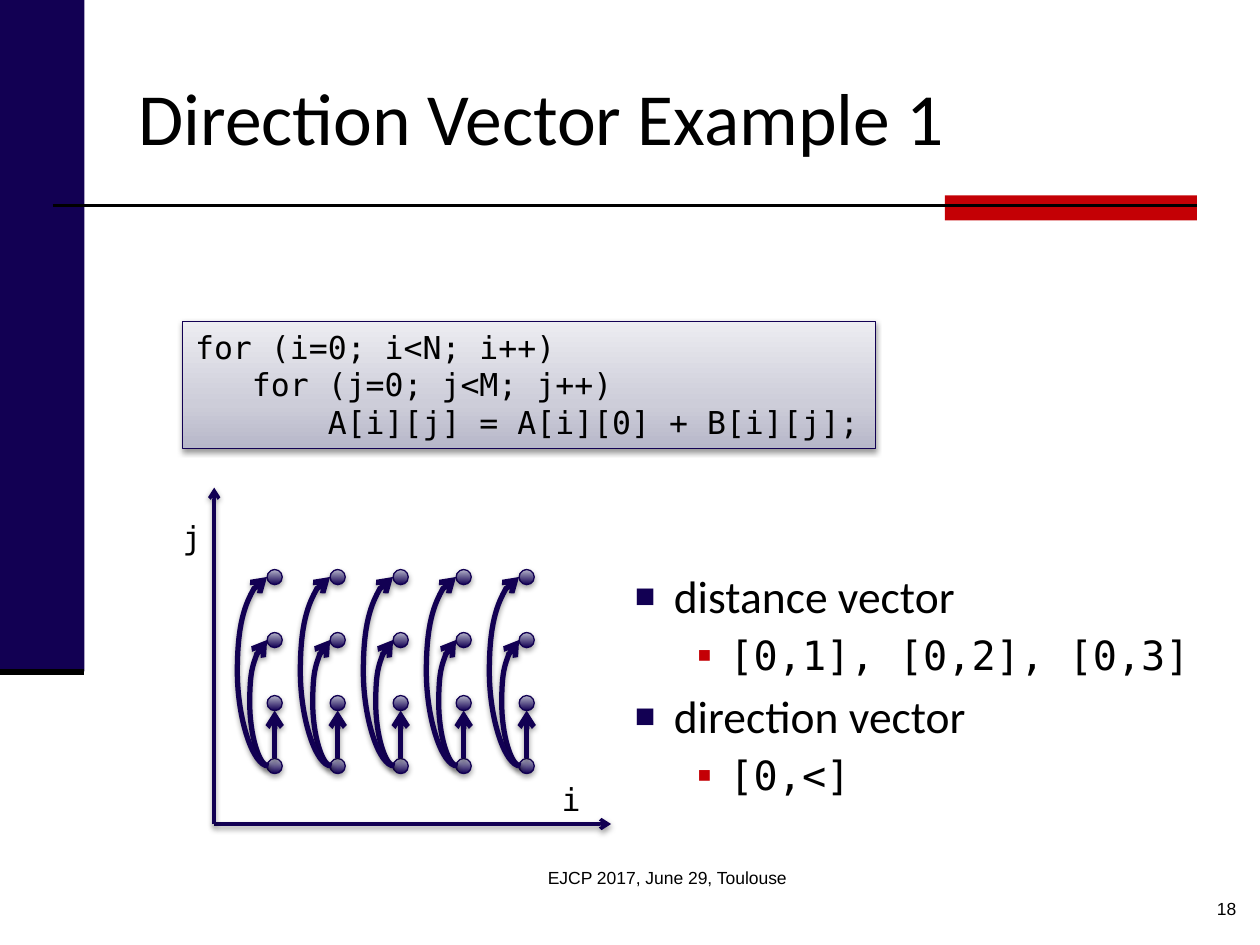
from pptx import Presentation
from pptx.dml.color import RGBColor
from pptx.enum.shapes import MSO_CONNECTOR as Connector, MSO_SHAPE as Shape
from pptx.enum.text import MSO_ANCHOR as Anchor, PP_ALIGN as Align
from pptx.oxml import parse_xml
from pptx.oxml.ns import nsdecls
from pptx.util import Inches, Pt

NAVY, RED, BLACK = "120053", "C40005", "000000"
SANS, MONO, SMALL = "Calibri", "DejaVu Sans Mono", "Arial"


def color(hex_value):
    return RGBColor.from_string(hex_value)


def add_xml(parent, xml, position=None):
    """Add a drawing element to parent, at the end unless a position is given."""
    head, mark, rest = xml.partition(" ")
    element = parse_xml(f"{head} {nsdecls('a')}{mark}{rest}")
    parent.insert(len(parent) if position is None else position, element)


def add_shadow(shape, alpha=38):
    add_xml(shape.element.spPr,
            '<a:effectLst ><a:outerShdw blurRad="40000" dist="20000" dir="5400000" rotWithShape="0">'
            f'<a:srgbClr val="{BLACK}"><a:alpha val="{alpha * 1000}"/></a:srgbClr>'
            '</a:outerShdw></a:effectLst>')


def add_block(slide, kind, left, top, width, height, fill):
    block = slide.shapes.add_shape(kind, Inches(left), Inches(top), Inches(width), Inches(height))
    block.shadow.inherit = False
    block.fill.solid()
    block.fill.fore_color.rgb = color(fill)
    block.line.fill.background()
    return block


def add_gradient_block(slide, kind, left, top, width, height, stops, alpha):
    """Shape shaded from bottom to top, with a thin navy outline and a shadow."""
    block = slide.shapes.add_shape(kind, Inches(left), Inches(top), Inches(width), Inches(height))
    stop_list = "".join(f'<a:gs pos="{position * 1000}"><a:srgbClr val="{value}"/></a:gs>'
                        for position, value in stops)
    add_xml(block.element.spPr,
            f'<a:gradFill rotWithShape="1"><a:gsLst>{stop_list}</a:gsLst>'
            '<a:lin ang="16200000" scaled="0"/></a:gradFill>', 2)
    block.line.color.rgb = color(NAVY)
    block.line.width = Pt(0.75)
    add_shadow(block, alpha)
    return block


def add_line(slide, start, end, width, line_color=NAVY, kind=Connector.STRAIGHT, arrow=False):
    """Line between two points; an arrow also gets a shadow."""
    line = slide.shapes.add_connector(kind, *map(Inches, start + end))
    line.line.color.rgb = color(line_color)
    line.line.width = Pt(width)
    if arrow:
        add_xml(line.line._get_or_add_ln(), '<a:tailEnd type="arrow"/>')
        add_shadow(line)
    else:
        add_xml(line.element.spPr, "<a:effectLst />")
    return line


def write_paragraph(paragraph, text, size, font, align=Align.LEFT):
    paragraph.text = text
    paragraph.alignment = align
    paragraph.font.size = Pt(size)
    paragraph.font.name = font
    paragraph.font.color.rgb = color(BLACK)


def add_text(slide, left, top, width, height, text, size, font, align=Align.LEFT,
             anchor=Anchor.TOP, wrap=True):
    box = slide.shapes.add_textbox(Inches(left), Inches(top), Inches(width), Inches(height))
    frame = box.text_frame
    frame.word_wrap = wrap
    frame.vertical_anchor = anchor
    write_paragraph(frame.paragraphs[0], text, size, font, align)


def add_decoration(slide):
    add_block(slide, Shape.RECTANGLE, 0, 0, 0.67, 5.33, NAVY)
    add_block(slide, Shape.RECTANGLE, 7.5, 1.55, 2, 0.2, RED)
    add_line(slide, (0.42, 1.63), (9.5, 1.63), 1.5, BLACK)
    add_line(slide, (0, 5.33), (0.67, 5.33), 3.5, BLACK)


def add_code(slide, left, top, width, height, lines):
    stops = [(0, "B7B7C9"), (35, "CDCDD9"), (100, "ECECF1")]
    block = add_gradient_block(slide, Shape.RECTANGLE, left, top, width, height, stops, 38)
    frame = block.text_frame
    frame.word_wrap = False
    frame.vertical_anchor = Anchor.TOP
    for index, line in enumerate(lines):
        paragraph = frame.add_paragraph() if index else frame.paragraphs[0]
        write_paragraph(paragraph, line, 18, MONO)


def add_dependence_arc(slide, x, bottom, rise, bulge):
    """Curved arrow up from one point to another, bowing out to the left."""
    width = 0.01
    arc = add_line(slide, (x + width, bottom), (x, bottom - rise), 3,
                   kind=Connector.CURVE, arrow=True)
    geometry = arc.element.spPr.prstGeom
    for guides in geometry.findall("{*}avLst"):
        geometry.remove(guides)
    ratio = round(bulge / width * 100000)
    add_xml(geometry, f'<a:avLst ><a:gd name="adj1" fmla="val {ratio}"/></a:avLst>')


def add_iteration_space(slide, left, top, width, height, columns=5, rows=4):
    bottom = top + height
    add_line(slide, (left, bottom), (left + width, bottom), 2, arrow=True)
    add_line(slide, (left, bottom), (left, top), 2, arrow=True)
    add_text(slide, left + 2.66, bottom - 0.4, 0.35, 0.4, "i", 18, MONO, wrap=False)
    add_text(slide, left - 0.35, top + 0.19, 0.35, 0.4, "j", 18, MONO, wrap=False)

    pitch, dot = 0.5, 0.12
    centers = [left + 0.48 + column * pitch for column in range(columns)]
    first_row = bottom - 0.46
    for x in centers:
        for row in range(rows):
            add_gradient_block(slide, Shape.OVAL, x - dot / 2, first_row - row * pitch - dot / 2,
                               dot, dot, [(0, NAVY), (100, "B6B5CA")], 35)
    for x in centers:
        for rise, bulge in ((2 * pitch, 0.15), (3 * pitch, 0.25)):
            add_dependence_arc(slide, x - dot / 2, first_row, rise, bulge)
        add_line(slide, (x, first_row - dot / 2), (x, first_row - pitch + dot / 2), 3, arrow=True)


def add_vector_list(slide, left, top, width, height, items):
    styles = {1: (0.81, -0.31, NAVY, 75, 26, SANS), 2: (1.25, -0.25, RED, 55, 23, MONO)}
    box = slide.shapes.add_textbox(Inches(left), Inches(top), Inches(width), Inches(height))
    frame = box.text_frame
    frame.word_wrap = True
    for index, (level, text) in enumerate(items):
        margin, indent, bullet_color, bullet_size, size, font = styles[level]
        paragraph = frame.add_paragraph() if index else frame.paragraphs[0]
        paragraph.level = level - 1
        properties = paragraph._p.get_or_add_pPr()
        properties.set("marL", str(Inches(margin)))
        properties.set("indent", str(Inches(indent)))
        add_xml(properties, f'<a:buClr ><a:srgbClr val="{bullet_color}"/></a:buClr>')
        add_xml(properties, f'<a:buSzPct val="{bullet_size * 1000}"/>')
        add_xml(properties, '<a:buFont typeface="Arial"/>')
        add_xml(properties, '<a:buChar char="■"/>')
        if index:
            paragraph.space_before = Pt(size * 0.2)
        write_paragraph(paragraph, text, size, font)


def build_slide(presentation):
    slide = presentation.slides.add_slide(presentation.slide_layouts[6])
    add_decoration(slide)
    add_text(slide, 1, 0.3, 8.5, 1.25, "Direction Vector Example 1", 42, SANS, anchor=Anchor.MIDDLE)
    add_text(slide, 7.83, 7.08, 2.08, 0.25, "18", 10, SMALL, Align.RIGHT)
    add_code(slide, 1.45, 2.55, 5.5, 1.01, [
        "for (i=0; i<N; i++)",
        "   for (j=0; j<M; j++)",
        "       A[i][j] = A[i][0] + B[i][j];",
    ])
    add_iteration_space(slide, 1.7, 3.87, 3.15, 2.67)
    add_vector_list(slide, 4.44, 4.46, 5.33, 2.13, [
        (1, "distance vector"),
        (2, "[0,1], [0,2], [0,3]"),
        (1, "direction vector"),
        (2, "[0,<]"),
    ])
    add_text(slide, 3.67, 6.83, 3.25, 0.5, "EJCP 2017, June 29, Toulouse", 10, SMALL, Align.CENTER)


def main():
    presentation = Presentation()
    presentation.slide_width, presentation.slide_height = Inches(10), Inches(7.5)
    build_slide(presentation)
    presentation.save("out.pptx")


if __name__ == "__main__":
    main()
